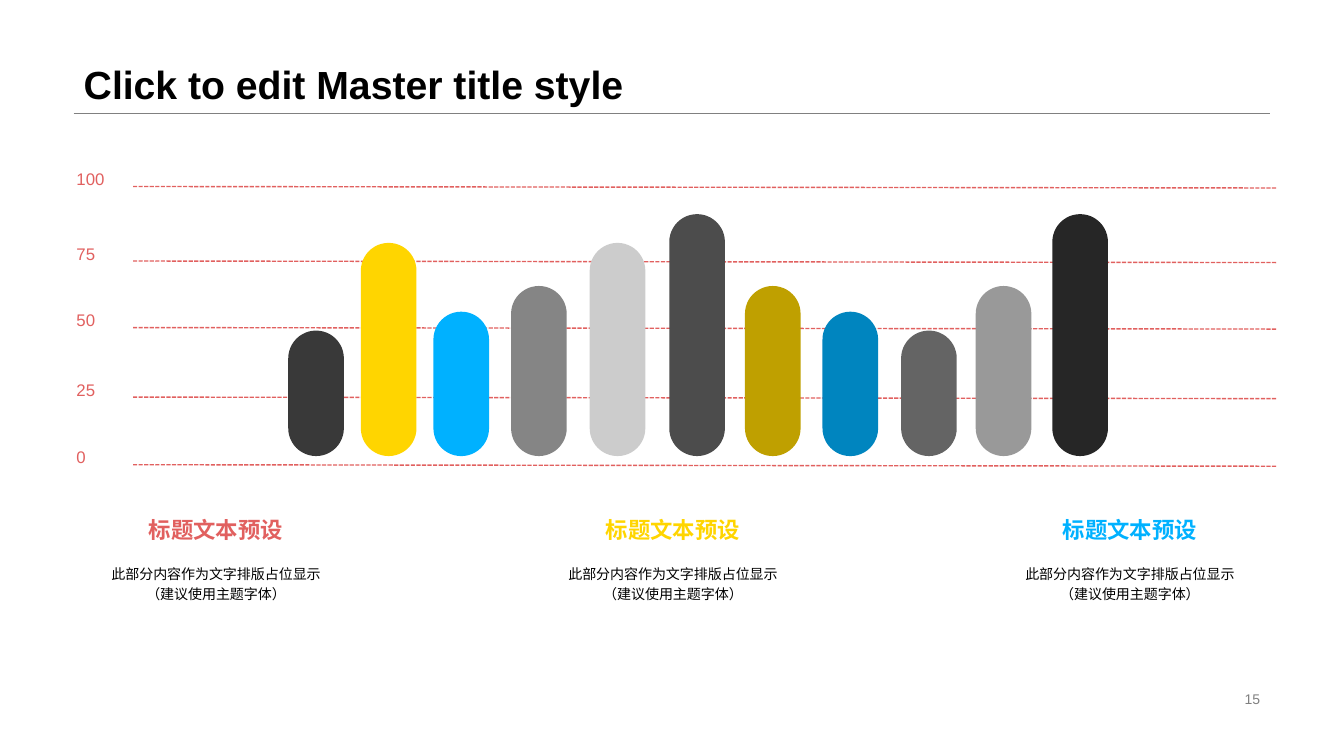
from dataclasses import dataclass

from lxml.etree import SubElement
from pptx import Presentation
from pptx.dml.color import RGBColor
from pptx.enum.dml import MSO_LINE_DASH_STYLE as Dash
from pptx.enum.shapes import MSO_CONNECTOR as Connector, MSO_SHAPE as Shape
from pptx.enum.text import MSO_ANCHOR as Anchor, MSO_AUTO_SIZE as AutoSize, PP_ALIGN as Align
from pptx.oxml.ns import qn
from pptx.slide import Slide
from pptx.text.text import TextFrame
from pptx.util import Emu, Inches, Pt

WIDTH, HEIGHT = Inches(13.333), Inches(7.5)


@dataclass(frozen=True)
class Theme:
    font: str = "Arial"
    black: str = "000000"
    grey: str = "808080"
    red: str = "E1605F"
    yellow: str = "FFD500"
    blue: str = "00B1FF"
    dark_yellow: str = "BFA000"
    dark_blue: str = "0085BF"
    bar_greys: tuple[str, ...] = (
        "262626", "393939", "4C4C4C", "646464", "858585", "999999", "CCCCCC")
    title_size: int = 28
    heading_size: int = 16
    axis_size: int = 12
    body_size: int = 10


THEME = Theme()


@dataclass(frozen=True)
class Box:
    """A rectangle in percent of the slide's width and height."""
    left: float
    top: float
    width: float
    height: float

    def lengths(self) -> tuple[Emu, Emu, Emu, Emu]:
        return (across(self.left), down(self.top),
                across(self.width), down(self.height))


@dataclass(frozen=True)
class Style:
    size: int
    color: str
    bold: bool = False
    align: Align = Align.LEFT
    anchor: Anchor = Anchor.TOP
    spacing: float = 1.0
    wrap: bool = True


@dataclass(frozen=True)
class GridLine:
    label: str
    top: float


@dataclass(frozen=True)
class Bar:
    left: float
    height: float
    color: str


@dataclass(frozen=True)
class Caption:
    heading: str
    body: str
    color: str


# Content
BLACK, CHARCOAL, DARK, SLATE, MIDDLE, SILVER, PALE = THEME.bar_greys
GRID_LINES = [
    GridLine("100", 24.67),
    GridLine("75", 34.53),
    GridLine("50", 43.33),
    GridLine("25", 52.53),
    GridLine("0", 61.47),
]
BARS = [
    Bar(21.45, 16.6, CHARCOAL),
    Bar(26.85, 28.2, THEME.yellow),
    Bar(32.25, 19.1, THEME.blue),
    Bar(38.03, 22.5, MIDDLE),
    Bar(43.88, 28.2, PALE),
    Bar(49.8, 32, DARK),
    Bar(55.43, 22.5, THEME.dark_yellow),
    Bar(61.2, 19.1, THEME.dark_blue),
    Bar(67.05, 16.6, SLATE),
    Bar(72.6, 22.5, SILVER),
    Bar(78.3, 32, BLACK),
]
CAPTIONS = [
    Caption("标题文本预设", "此部分内容作为文字排版占位显示\n（建议使用主题字体）", color)
    for color in (THEME.red, THEME.yellow, THEME.blue)
]
BAR_WIDTH, BAR_BASE = 4.14, 60.33
CAPTION_CENTER, CAPTION_STEP = 16.07, 34


def across(percent: float) -> Emu:
    return Emu(round(WIDTH * percent / 100))


def down(percent: float) -> Emu:
    return Emu(round(HEIGHT * percent / 100))


def write(frame: TextFrame, text: str, style: Style) -> None:
    frame.auto_size = AutoSize.NONE
    frame.word_wrap = style.wrap
    frame.vertical_anchor = style.anchor
    paragraph = frame.paragraphs[0]
    paragraph.text = text
    paragraph.alignment = style.align
    paragraph.line_spacing = style.spacing
    for run in paragraph.runs:
        run.font.name = THEME.font
        run.font.size = Pt(style.size)
        run.font.bold = style.bold
        run.font.color.rgb = RGBColor.from_string(style.color)


def add_text(slide: Slide, box: Box, text: str, style: Style) -> None:
    write(slide.shapes.add_textbox(*box.lengths()).text_frame, text, style)


def add_line(slide: Slide, start: tuple[float, float], end: tuple[float, float],
             color: str, weight: float, dash: Dash = Dash.SOLID) -> None:
    line = slide.shapes.add_connector(
        Connector.STRAIGHT, across(start[0]), down(start[1]),
        across(end[0]), down(end[1]))
    line.line.color.rgb = RGBColor.from_string(color)
    line.line.width = Pt(weight)
    line.line.dash_style = dash
    SubElement(line.element.spPr, qn("a:effectLst"))


def add_title(slide: Slide, text: str) -> None:
    title = slide.shapes.title
    box = Box(5.48, 0, 89.02, 14.93)
    title.left, title.top, title.width, title.height = box.lengths()
    write(title.text_frame, text, Style(
        THEME.title_size, THEME.black, bold=True, anchor=Anchor.BOTTOM, spacing=0.9))
    add_line(slide, (5.48, 14.93), (94.5, 14.93), THEME.grey, 0.25)


def add_grid_line(slide: Slide, grid_line: GridLine) -> None:
    label_width = 1.45 + 0.72 * len(grid_line.label)
    add_text(slide, Box(4.95, grid_line.top - 2.97, label_width, 4),
             grid_line.label, Style(THEME.axis_size, THEME.red, wrap=False))
    add_line(slide, (9.9, grid_line.top), (94.95, grid_line.top + 0.2),
             THEME.red, 1, Dash.SQUARE_DOT)


def add_bar(slide: Slide, bar: Bar) -> None:
    box = Box(bar.left, BAR_BASE - bar.height, BAR_WIDTH, bar.height)
    shape = slide.shapes.add_shape(Shape.ROUNDED_RECTANGLE, *box.lengths())
    shape.adjustments[0] = 0.5
    shape.shadow.inherit = False
    shape.fill.solid()
    shape.fill.fore_color.rgb = RGBColor.from_string(bar.color)
    shape.line.fill.background()


def add_caption(slide: Slide, caption: Caption, center: float) -> None:
    add_text(slide, Box(center - 5.82, 67.6, 11.63, 6.67), caption.heading,
             Style(THEME.heading_size, caption.color, bold=True,
                   align=Align.CENTER, wrap=False))
    add_text(slide, Box(center - 10.05, 73.73, 20.1, 8.13), caption.body,
             Style(THEME.body_size, THEME.black, align=Align.CENTER, spacing=1.2))


def main() -> None:
    presentation = Presentation()
    presentation.slide_width, presentation.slide_height = WIDTH, HEIGHT
    slide = presentation.slides.add_slide(presentation.slide_layouts[5])

    # Title and page number
    add_title(slide, "Click to edit Master title style")
    add_text(slide, Box(70.65, 90.93, 23.85, 3.07), "15", Style(
        THEME.body_size, THEME.grey, align=Align.RIGHT, anchor=Anchor.MIDDLE))

    # Scale and bars
    for grid_line in GRID_LINES:
        add_grid_line(slide, grid_line)
    for bar in BARS:
        add_bar(slide, bar)

    # Captions below the bars
    for index, caption in enumerate(CAPTIONS):
        add_caption(slide, caption, CAPTION_CENTER + index * CAPTION_STEP)

    presentation.save("out.pptx")


if __name__ == "__main__":
    main()
